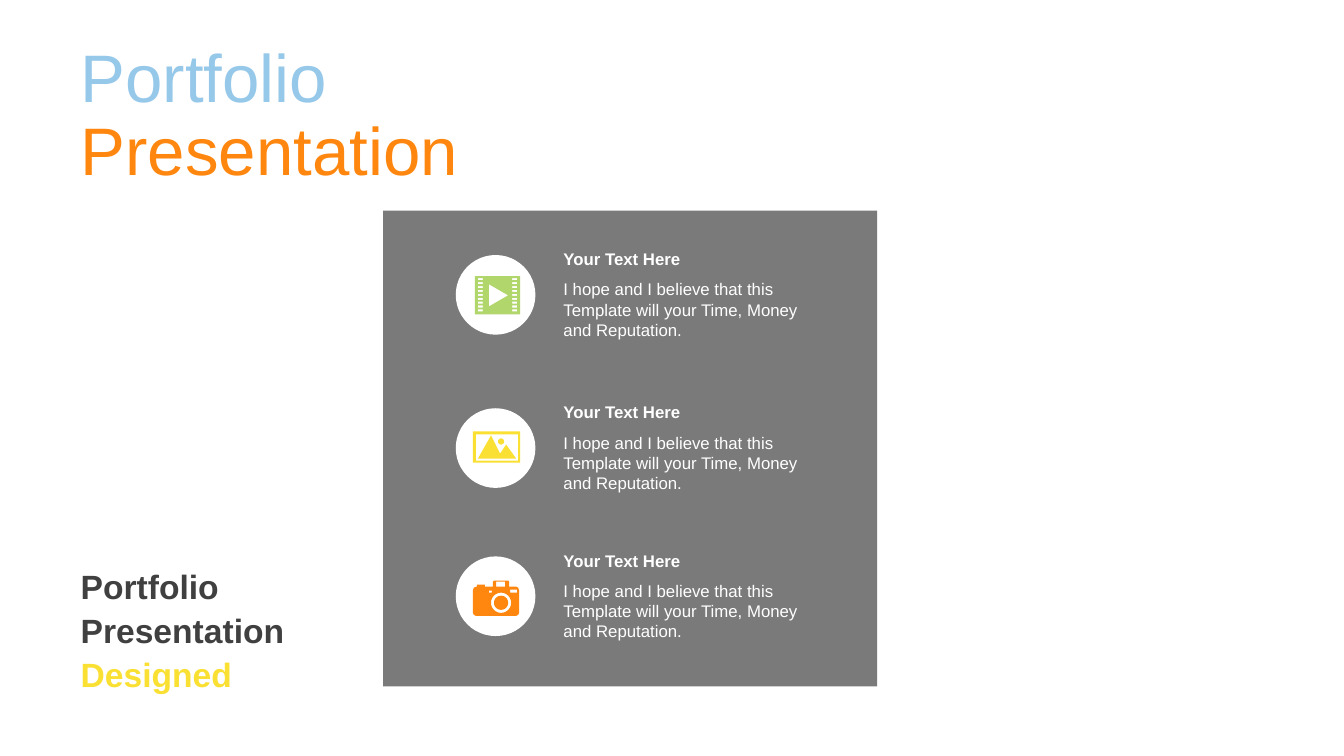
"""Build the portfolio slide: two headings and a panel of three icon items."""
from dataclasses import dataclass
from math import cos, pi, sin

from lxml.etree import SubElement
from pptx import Presentation
from pptx.dml.color import RGBColor as RGB
from pptx.enum.shapes import MSO_SHAPE as SHAPE
from pptx.enum.text import MSO_ANCHOR as ANCHOR, MSO_AUTO_SIZE as AUTO, PP_ALIGN as ALIGN
from pptx.oxml.ns import qn
from pptx.util import Inches, Pt

Contour = list[tuple[float, float]]


@dataclass(frozen=True)
class Theme:
    """Colours, font and type sizes."""
    font: str = "Arial"
    blue: str = "96C8E9"
    orange: str = "FF870F"
    yellow: str = "FBE034"
    green: str = "B0D66C"
    dark: str = "404040"
    panel: str = "595959"
    white: str = "FFFFFF"
    title: int = 48
    tagline: int = 24
    body: int = 12


@dataclass(frozen=True)
class Span:
    """A piece of text with its look."""
    text: str
    color: str
    size: int
    bold: bool = False


@dataclass(frozen=True)
class Item:
    """One row of the panel."""
    top: float
    color: str
    icon: list[Contour]


THEME = Theme()
HEADING = "Your Text Here"
BODY = "I hope and I believe that this Template will your Time, Money and Reputation."
DISC = 0.79


def box(x: float, y: float, w: float, h: float) -> Contour:
    """Return the corners of a rectangle."""
    return [(x, y), (x + w, y), (x + w, y + h), (x, y + h)]


def ring(x: float, y: float, radius: float, steps: int = 48) -> Contour:
    """Return points around a circle."""
    angles = [2 * pi * i / steps for i in range(steps)]
    return [(x + radius * cos(a), y + radius * sin(a)) for a in angles]


def film_icon() -> list[Contour]:
    """Return a film frame with perforations and a play sign."""
    holes = [box(x, 2.76 + 0.31 / 8 * i, 0.05, 0.02) for x in (4.74, 5.08) for i in range(9)]
    play = [(4.85, 2.82), (4.85, 3.04), (5.04, 2.93)]
    return [box(4.71, 2.74, 0.45, 0.38), play, *holes]


def landscape_icon() -> list[Contour]:
    """Return a framed view with mountains and a sun."""
    hills = [(4.87, 4.32), (4.96, 4.5), (5.02, 4.41), (5.12, 4.55), (4.74, 4.55)]
    return [box(4.69, 4.28, 0.47, 0.31), box(4.72, 4.31, 0.42, 0.26), hills,
            ring(4.97, 4.38, 0.03)]


def camera_icon() -> list[Contour]:
    """Return a camera with its lens and flash."""
    body = [(4.9, 5.76), (5.04, 5.76), (5.05, 5.77), (5.05, 5.82), (5.12, 5.82), (5.14, 5.83),
            (5.15, 5.86), (5.15, 6.08), (5.14, 6.1), (5.12, 6.11), (4.72, 6.11), (4.7, 6.1),
            (4.69, 6.08), (4.69, 5.86), (4.7, 5.83), (4.73, 5.82), (4.73, 5.8), (4.81, 5.8),
            (4.81, 5.82), (4.89, 5.82), (4.89, 5.77)]
    return [body, ring(4.97, 5.98, 0.1), ring(4.97, 5.98, 0.07), box(4.85, 5.86, 0.03, 0.02),
            box(5.06, 5.85, 0.07, 0.03), box(4.92, 5.77, 0.09, 0.05)]


def paint(sp, color: str) -> None:
    """Give a shape a flat fill without line or shadow."""
    sp.shadow.inherit = False
    sp.fill.solid()
    sp.fill.fore_color.rgb = RGB.from_string(color)
    sp.line.fill.background()


def add_flat(slide, kind: SHAPE, x: float, y: float, w: float, h: float, color: str):
    """Add a flat preset shape."""
    sp = slide.shapes.add_shape(kind, Inches(x), Inches(y), Inches(w), Inches(h))
    paint(sp, color)
    return sp


def add_icon(slide, contours: list[Contour], color: str) -> None:
    """Draw contours as one freeform, inner ones cutting holes."""
    unit = 1000
    fb = None
    for contour in contours:
        points = [(round(x * unit), round(y * unit)) for x, y in contour]
        if fb is None:
            fb = slide.shapes.build_freeform(*points[0], scale=Inches(1) / unit)
        else:
            fb.move_to(*points[0])
        fb.add_line_segments(points[1:], close=True)
    paint(fb.convert_to_shape(), color)


def write(tf, spans: list[Span], spacing: float = 1.0) -> None:
    """Write spans as one left-aligned wrapped paragraph."""
    tf.word_wrap = True
    p = tf.paragraphs[0]
    p.alignment, p.line_spacing = ALIGN.LEFT, spacing
    for span in spans:
        r = p.add_run()
        r.text = span.text
        r.font.name, r.font.size, r.font.bold = THEME.font, Pt(span.size), span.bold
        r.font.color.rgb = RGB.from_string(span.color)


def fill_placeholder(sp, x: float, y: float, w: float, h: float,
                     spans: list[Span], spacing: float) -> None:
    """Move a placeholder and write its text."""
    sp.left, sp.top, sp.width, sp.height = Inches(x), Inches(y), Inches(w), Inches(h)
    sp.text_frame.auto_size = AUTO.NONE
    sp.text_frame.vertical_anchor = ANCHOR.MIDDLE
    write(sp.text_frame, spans, spacing)


def add_text(slide, x: float, y: float, w: float, h: float, span: Span) -> None:
    """Add a text box holding one span."""
    sp = slide.shapes.add_textbox(Inches(x), Inches(y), Inches(w), Inches(h))
    write(sp.text_frame, [span])


def add_item(slide, item: Item) -> None:
    """Draw one row: disc, icon, heading and body."""
    add_flat(slide, SHAPE.OVAL, 4.52, item.top, DISC, DISC, THEME.white)
    add_icon(slide, item.icon, item.color)
    add_text(slide, 5.49, item.top - 0.11, 2.63, 0.3,
             Span(HEADING, THEME.white, THEME.body, True))
    add_text(slide, 5.49, item.top + 0.19, 2.63, 0.71, Span(BODY, THEME.white, THEME.body))


def main() -> None:
    """Build and save the slide."""
    prs = Presentation()
    prs.slide_width, prs.slide_height = Inches(13.33), Inches(7.5)
    slide = prs.slides.add_slide(prs.slide_layouts.get_by_name("Content with Caption"))
    content, tagline = slide.placeholders[1], slide.placeholders[2]
    content.element.getparent().remove(content.element)

    fill_placeholder(slide.shapes.title, 0.7, 0.26, 4.13, 1.81,
                     [Span("Portfolio ", THEME.blue, THEME.title),
                      Span("Presentation", THEME.orange, THEME.title)], 0.9)
    fill_placeholder(tagline, 0.7, 5.38, 2.58, 1.7,
                     [Span("Portfolio Presentation ", THEME.dark, THEME.tagline, True),
                      Span("Designed", THEME.yellow, THEME.tagline, True)], 1.1)

    panel = add_flat(slide, SHAPE.RECTANGLE, 3.8, 2.09, 4.9, 4.72, THEME.panel)
    color = panel.element.spPr.find(qn("a:solidFill"))[0]
    SubElement(color, qn("a:alpha"), val="80000")

    for item in (Item(2.53, THEME.green, film_icon()),
                 Item(4.05, THEME.yellow, landscape_icon()),
                 Item(5.52, THEME.orange, camera_icon())):
        add_item(slide, item)
    prs.save("out.pptx")


if __name__ == "__main__":
    main()
